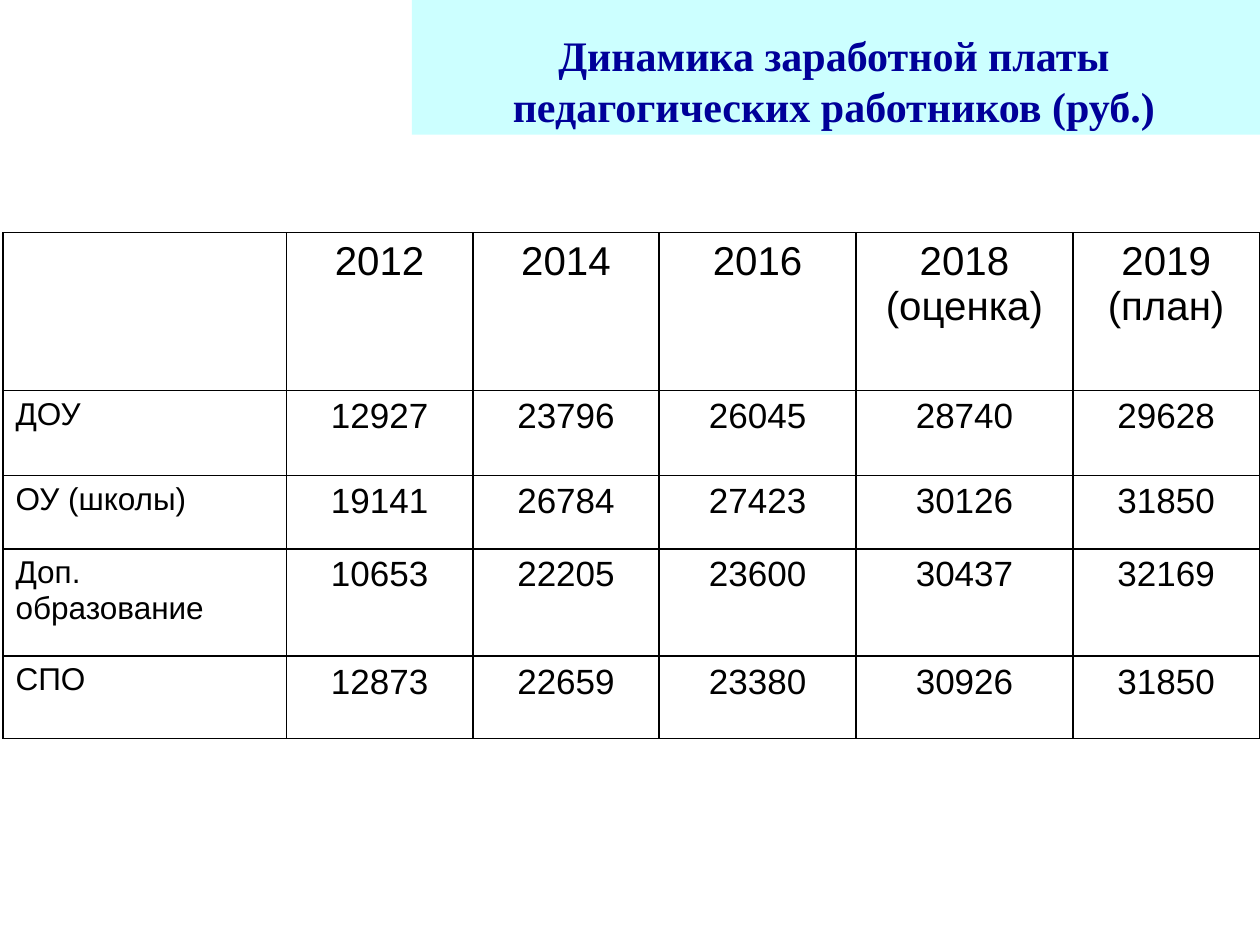
from dataclasses import dataclass

from lxml.etree import SubElement
from pptx import Presentation
from pptx.dml.color import RGBColor
from pptx.enum.shapes import MSO_SHAPE
from pptx.enum.text import MSO_ANCHOR, PP_ALIGN
from pptx.oxml import parse_xml
from pptx.oxml.ns import nsdecls, qn
from pptx.util import Pt

BLACK = RGBColor(0x00, 0x00, 0x00)
NAVY = RGBColor(0x00, 0x00, 0x99)
PALE_CYAN = RGBColor(0xCC, 0xFF, 0xFF)


@dataclass(frozen=True)
class Row:
    label: str
    values: tuple
    height: float
    size: float = 20


TITLE = ("Динамика заработной платы", "педагогических работников (руб.)")
COL_WIDTHS = (162, 106.5, 106.5, 112.5, 124, 106.5)
ROWS = (
    Row("", ("2012", "2014", "2016", "2018 (оценка)", "2019 (план)"), 90, 23),
    Row("ДОУ", (12927, 23796, 26045, 28740, 29628), 48.7),
    Row("ОУ (школы)", (19141, 26784, 27423, 30126, 31850), 42),
    Row("Доп. образование", (10653, 22205, 23600, 30437, 32169), 61.2),
    Row("СПО", (12873, 22659, 23380, 30926, 31850), 47),
)


def add_run(p, text: str, font: str, size: float, color: RGBColor, bold: bool = False) -> None:
    r = p.add_run()
    r.text = text
    r.font.name = font
    r.font.size = Pt(size)
    r.font.bold = bold
    r.font.color.rgb = color


def add_borders(cell) -> None:
    tc_pr = cell._tc.get_or_add_tcPr()
    for i, side in enumerate(("lnL", "lnR", "lnT", "lnB")):
        ln = parse_xml(f'<a:{side} {nsdecls("a")} w="{Pt(1)}"/>')
        fill = SubElement(ln, qn("a:solidFill"))
        SubElement(fill, qn("a:srgbClr"), val=str(BLACK))
        tc_pr.insert(i, ln)


def fill_cell(cell, text: str, size: float, align: PP_ALIGN) -> None:
    cell.fill.background()
    cell.margin_left = cell.margin_right = Pt(7.2)
    cell.margin_top = cell.margin_bottom = Pt(3.6)
    add_borders(cell)
    p = cell.text_frame.paragraphs[0]
    p.alignment = align
    if text:
        add_run(p, text, "Arial", size, BLACK)


def add_title(s) -> None:
    # Band behind the title
    band = s.shapes.add_shape(MSO_SHAPE.RECTANGLE, Pt(235.4), Pt(0), Pt(484.6), Pt(77))
    band.shadow.inherit = False
    band.fill.solid()
    band.fill.fore_color.rgb = PALE_CYAN
    band.line.fill.background()

    # Title text
    tf = s.shapes.add_textbox(Pt(241), Pt(9), Pt(471), Pt(73.5)).text_frame
    tf.word_wrap = True
    tf.vertical_anchor = MSO_ANCHOR.MIDDLE
    p = tf.paragraphs[0]
    p.alignment = PP_ALIGN.CENTER
    for i, line in enumerate(TITLE):
        if i:
            p.add_line_break()
        add_run(p, line, "Times New Roman", 24, NAVY, bold=True)


def add_salary_table(s) -> None:
    table = s.shapes.add_table(len(ROWS), len(COL_WIDTHS), Pt(1.7), Pt(133),
                               Pt(sum(COL_WIDTHS)), Pt(sum(row.height for row in ROWS))).table
    table.first_row = table.horz_banding = False
    for col, width in zip(table.columns, COL_WIDTHS):
        col.width = Pt(width)
    for i, row in enumerate(ROWS):
        table.rows[i].height = Pt(row.height)
        fill_cell(table.cell(i, 0), row.label, 18, PP_ALIGN.LEFT)
        for j, value in enumerate(row.values, 1):
            fill_cell(table.cell(i, j), str(value), row.size, PP_ALIGN.CENTER)


def main() -> None:
    prs = Presentation()
    prs.slide_width, prs.slide_height = Pt(720), Pt(540)
    s = prs.slides.add_slide(prs.slide_layouts[6])
    add_title(s)
    add_salary_table(s)
    prs.save("out.pptx")


if __name__ == "__main__":
    main()
